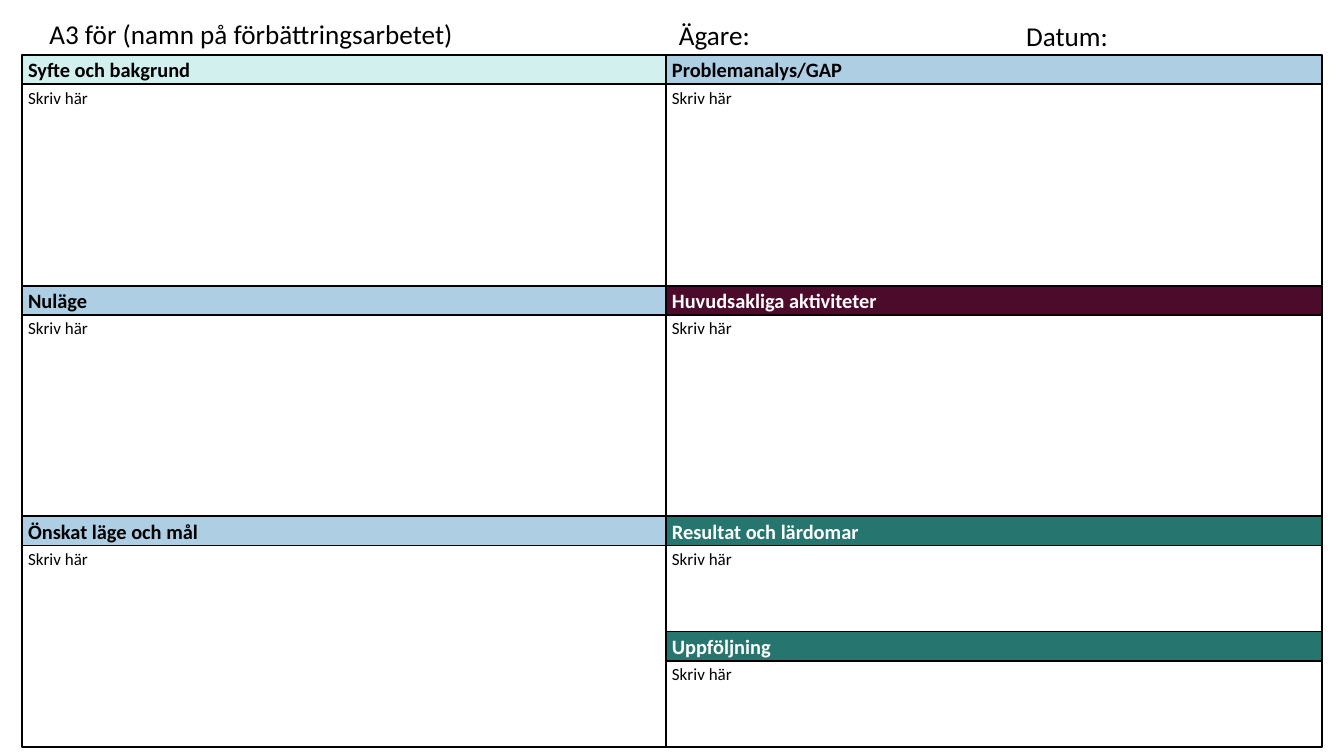
from dataclasses import dataclass

from pptx import Presentation
from pptx.dml.color import RGBColor
from pptx.enum.shapes import MSO_SHAPE
from pptx.enum.text import MSO_ANCHOR, MSO_AUTO_SIZE, PP_ALIGN
from pptx.util import Pt

RECT = MSO_SHAPE.RECTANGLE
TOP, MIDDLE = MSO_ANCHOR.TOP, MSO_ANCHOR.MIDDLE
LEFT = PP_ALIGN.LEFT
NONE, GROW = MSO_AUTO_SIZE.NONE, MSO_AUTO_SIZE.SHAPE_TO_FIT_TEXT


@dataclass(frozen=True)
class Theme:
    font: str = "Calibri"
    black: str = "000000"
    white: str = "FFFFFF"
    mint: str = "D1F0EE"
    blue: str = "ADCEE3"
    wine: str = "4D0B2C"
    teal: str = "26766F"
    label: int = 32
    head: int = 24
    body: int = 20
    line: int = 2


class Sheet:
    def __init__(self, slide, theme):
        self.slide = slide
        self.theme = theme

    def put_text(self, shape, text, size, color, bold=False, anchor=TOP, fit=NONE):
        frame = shape.text_frame
        frame.text = text
        frame.word_wrap = True
        frame.auto_size = fit
        frame.vertical_anchor = anchor
        para = frame.paragraphs[0]
        para.alignment = LEFT
        font = para.runs[0].font
        font.name = self.theme.font
        font.size = Pt(size)
        font.bold = bold
        font.color.rgb = RGBColor.from_string(color)

    def title(self, text, x, y, w, h):
        shape = self.slide.shapes.title
        shape.left, shape.top, shape.width, shape.height = map(Pt, (x, y, w, h))
        self.put_text(shape, text, self.theme.label, self.theme.black)

    def label(self, text, x, y, w, h):
        shape = self.slide.shapes.add_textbox(*map(Pt, (x, y, w, h)))
        self.put_text(shape, text, self.theme.label, self.theme.black, fit=GROW)

    def box(self, x, y, w, h, fill=None):
        shape = self.slide.shapes.add_shape(RECT, *map(Pt, (x, y, w, h)))
        shape.shadow.inherit = False
        if fill:
            shape.fill.solid()
            shape.fill.fore_color.rgb = RGBColor.from_string(fill)
        else:
            shape.fill.background()
        shape.line.color.rgb = RGBColor.from_string(self.theme.black)
        shape.line.width = Pt(self.theme.line)
        return shape

    def panel(self, head, fill, ink, x, y, w, h):
        """Draw a heading bar with a writing area below it."""
        area = self.box(x, y + BAR, w, h - BAR)
        self.put_text(area, "Skriv här", self.theme.body, self.theme.black)
        bar = self.box(x, y, w, BAR, fill)
        self.put_text(bar, head, self.theme.head, ink, True, MIDDLE)


# Grid: three rows, the last one halved on the right
BAR = 34.5
ROW = 271.7
START = 64.8
LEFT_COL = (26, 758.5)
RIGHT_COL = (784.5, 772.8)


def main():
    theme = Theme()
    deck = Presentation()
    deck.slide_width, deck.slide_height = Pt(1583.3), Pt(890.6)
    sheet = Sheet(deck.slides.add_slide(deck.slide_layouts[5]), theme)

    # Top line
    sheet.title("A3 för (namn på förbättringsarbetet)", 51, 17.3, 741, 46)
    sheet.label("Ägare:", 792.7, 18, 442, 46)
    sheet.label("Datum:", 1201.7, 18.7, 275, 46)

    # Panels: heading, fill, text colour and share of a row
    columns = (
        (LEFT_COL, (
            ("Syfte och bakgrund", theme.mint, theme.black, 1),
            ("Nuläge", theme.blue, theme.black, 1),
            ("Önskat läge och mål", theme.blue, theme.black, 1),
        )),
        (RIGHT_COL, (
            ("Problemanalys/GAP", theme.blue, theme.black, 1),
            ("Huvudsakliga aktiviteter", theme.wine, theme.white, 1),
            ("Resultat och lärdomar", theme.teal, theme.white, 0.5),
            ("Uppföljning", theme.teal, theme.white, 0.5),
        )),
    )
    for (x, width), panels in columns:
        y = START
        for head, fill, ink, share in panels:
            sheet.panel(head, fill, ink, x, y, width, ROW * share)
            y += ROW * share

    deck.save("out.pptx")


if __name__ == "__main__":
    main()
